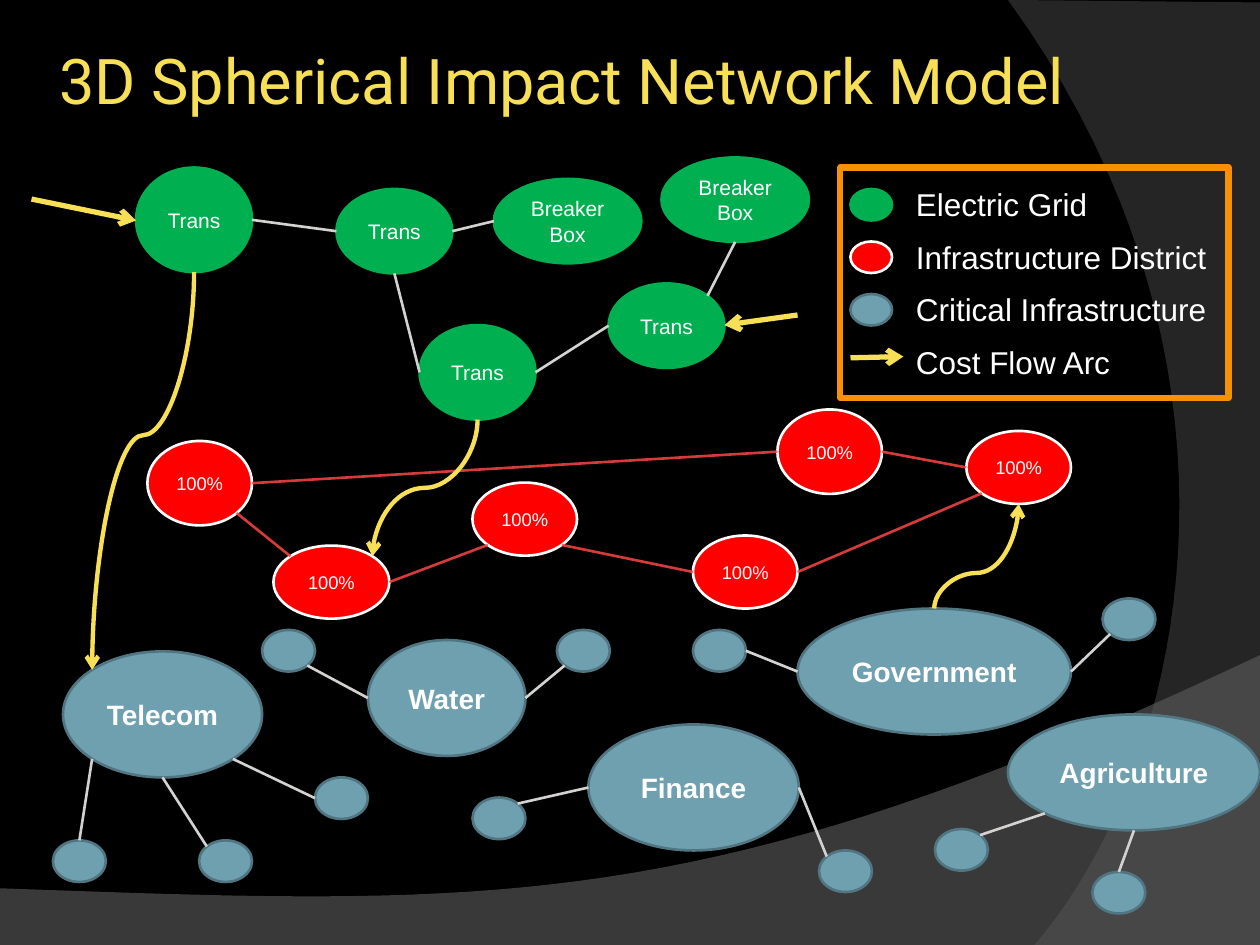
"""Build the 3D Spherical Impact Network Model slide."""
from dataclasses import dataclass
from math import cos, pi, sin

from lxml.etree import SubElement
from pptx import Presentation
from pptx.dml.color import RGBColor
from pptx.enum.shapes import MSO_CONNECTOR as Link, MSO_SHAPE as Preset
from pptx.enum.text import MSO_ANCHOR as Anchor, PP_ALIGN as Align
from pptx.oxml.ns import qn
from pptx.util import Inches, Pt


@dataclass(frozen=True)
class Theme:
    """Colours, fonts and type sizes of the slide."""
    background: str = "000000"
    white: str = "FFFFFF"
    gold: str = "F7DF56"
    orange: str = "F89006"
    grey: str = "D4D2D0"
    rose: str = "FF4747"
    low_wave: str = "7F7F7F"
    side_wave: str = "5E5E5E"
    title_font: str = "Roboto"
    font: str = "Arial"
    title_size: float = 36
    legend_size: float = 18


THEME = Theme()

# fill, outline, type size, bold
KINDS = {
    "grid": ("00B050", "00B050", 12, False),
    "district": ("FF0000", "FFFFFF", 10.5, False),
    "critical": ("6EA0B0", "517682", 16, True),
}

SITES = ["top", "top left", "left", "bottom left",
         "bottom", "bottom right", "right", "top right"]

NODES = {
    "source": ("grid", "Trans", 1.08, 1.33, 0.92, 0.83),
    "relay": ("grid", "Trans", 2.67, 1.5, 0.92, 0.67),
    "junction": ("grid", "Trans", 3.33, 2.58, 0.92, 0.75),
    "feeder": ("grid", "Trans", 4.83, 2.25, 0.92, 0.67),
    "breaker 1": ("grid", "Breaker Box", 3.92, 1.42, 1.17, 0.67),
    "breaker 2": ("grid", "Breaker Box", 5.25, 1.25, 1.17, 0.67),
    "district 1": ("district", "100%", 1.17, 3.5, 0.83, 0.67),
    "district 2": ("district", "100%", 2.17, 4.33, 0.92, 0.58),
    "district 3": ("district", "100%", 3.75, 3.83, 0.83, 0.58),
    "district 4": ("district", "100%", 5.5, 4.25, 0.83, 0.58),
    "district 5": ("district", "100%", 6.17, 3.25, 0.83, 0.67),
    "district 6": ("district", "100%", 7.67, 3.42, 0.83, 0.58),
    "telecom": ("critical", "Telecom", 0.5, 5.17, 1.58, 1),
    "water": ("critical", "Water", 2.92, 5.08, 1.25, 0.92),
    "finance": ("critical", "Finance", 4.67, 5.75, 1.67, 1),
    "government": ("critical", "Government", 6.33, 4.83, 2.17, 1),
    "agriculture": ("critical", "Agriculture", 8, 5.67, 2, 0.92),
}

GRID_LINKS = [
    ("source", "right", "relay", "left"),
    ("relay", "right", "breaker 1", "left"),
    ("relay", "bottom", "junction", "left"),
    ("junction", "right", "feeder", "left"),
    ("feeder", "top right", "breaker 2", "bottom"),
]
DISTRICT_LINKS = [
    ("district 1", "bottom right", "district 2", "top left"),
    ("district 2", "right", "district 3", "bottom left"),
    ("district 3", "bottom right", "district 4", "left"),
    ("district 4", "right", "district 6", "bottom left"),
    ("district 1", "right", "district 5", "left"),
    ("district 5", "right", "district 6", "left"),
]
SATELLITES = [
    (0.42, 6.67, "top", "telecom", "bottom left"),
    (1.58, 6.67, "top left", "telecom", "bottom"),
    (2.5, 6.17, "left", "telecom", "bottom right"),
    (2.08, 5, "bottom right", "water", "left"),
    (4.42, 5, "bottom left", "water", "right"),
    (3.75, 6.33, "top right", "finance", "left"),
    (6.5, 6.75, "top left", "finance", "right"),
    (5.5, 5, "right", "government", "left"),
    (8.75, 4.75, "bottom left", "government", "right"),
    (7.42, 6.58, "top right", "agriculture", "bottom left"),
    (8.67, 6.92, "top", "agriculture", "bottom"),
]
COST_ARCS = [
    ("source", "bottom", "telecom", "top left", 0.41),
    ("junction", "bottom", "district 2", "top right", 0.5),
    ("government", "top", "district 6", "bottom", 0.34),
]
LEGEND = [("Electric Grid", "grid"), ("Infrastructure District", "district"),
          ("Critical Infrastructure", "critical"), ("Cost Flow Arc", None)]


def write(frame, text, *, size, color=THEME.white, font=THEME.font,
          bold=False, align=Align.LEFT, anchor=Anchor.TOP, inset=0.05):
    """Put one formatted paragraph into a text frame."""
    frame.word_wrap, frame.vertical_anchor = True, anchor
    frame.margin_left = frame.margin_right = Inches(inset)
    frame.margin_top = frame.margin_bottom = Inches(0.05)
    paragraph = frame.paragraphs[0]
    paragraph.alignment = align
    run = paragraph.add_run()
    run.text = text
    run.font.size, run.font.name, run.font.bold = Pt(size), font, bold
    run.font.color.rgb = RGBColor.from_string(color)


def set_alpha(part, percent):
    """Give the solid colour inside an XML part an opacity."""
    color = next(part.iter(qn("a:srgbClr")))
    SubElement(color, qn("a:alpha")).set("val", str(percent * 1000))


def add_oval(slide, kind, box, label=""):
    """Add an ellipse in the style of its network kind."""
    fill, outline, size, bold = KINDS[kind]
    oval = slide.shapes.add_shape(Preset.OVAL, *map(Inches, box))
    oval.shadow.inherit = False
    oval.fill.solid()
    oval.fill.fore_color.rgb = RGBColor.from_string(fill)
    oval.line.color.rgb = RGBColor.from_string(outline)
    oval.line.width = Pt(1.5)
    if label:
        write(oval.text_frame, label, size=size, bold=bold,
              align=Align.CENTER, anchor=Anchor.MIDDLE)
    return oval


def site_point(oval, site):
    """Return the point of a named connection site on an ellipse, in inches."""
    angle = pi / 2 + SITES.index(site) * pi / 4
    x = oval.left + oval.width / 2 * (1 + cos(angle))
    y = oval.top + oval.height / 2 * (1 - sin(angle))
    return x / Inches(1), y / Inches(1)


def add_line(slide, start, end, color, width=1.5, *, link=Link.STRAIGHT,
             arrow=False, opacity=None):
    """Add a connector between two points."""
    line = slide.shapes.add_connector(link, *map(Inches, (*start, *end)))
    line.line.color.rgb = RGBColor.from_string(color)
    line.line.width = Pt(width)
    properties = line._element.spPr
    if opacity:
        set_alpha(properties, opacity)
    if arrow:
        SubElement(properties.find(qn("a:ln")), qn("a:tailEnd")).set("type", "arrow")
    SubElement(properties, qn("a:effectLst"))
    return line


def join(slide, start, start_site, end, end_site, color, opacity=None):
    """Join two ellipses with a line glued to their connection sites."""
    line = add_line(slide, site_point(start, start_site),
                    site_point(end, end_site), color, opacity=opacity)
    glue = next(line._element.iter(qn("p:cNvCxnSpPr")))
    for tag, oval, site in (("a:stCxn", start, start_site), ("a:endCxn", end, end_site)):
        anchor = SubElement(glue, qn(tag))
        anchor.set("id", str(oval.shape_id))
        anchor.set("idx", str(SITES.index(site)))


def add_cost_arc(slide, start, end, bend):
    """Add a vertical S-curve as a connector turned by a quarter."""
    middle_x, middle_y = (start[0] + end[0]) / 2, (start[1] + end[1]) / 2
    half_x, half_y = (end[1] - start[1]) / 2, (start[0] - end[0]) / 2
    arc = add_line(slide, (middle_x - half_x, middle_y - half_y),
                   (middle_x + half_x, middle_y + half_y),
                   THEME.gold, 2.5, link=Link.CURVE, arrow=True)
    properties = arc._element.spPr
    properties.find(qn("a:xfrm")).set("rot", str(90 * 60000))
    guide = SubElement(next(properties.iter(qn("a:avLst"))), qn("a:gd"))
    guide.set("name", "adj1")
    guide.set("fmla", f"val {round(bend * 100000)}")


def add_wave(slide, corners, curve, color, opacity):
    """Add a translucent backdrop whose last edge is a Bezier curve."""
    steps = [step / 40 for step in range(41)]
    edge = [tuple(a * (1 - t) ** 3 + 3 * b * t * (1 - t) ** 2
                  + 3 * c * t * t * (1 - t) + d * t ** 3 for a, b, c, d in zip(*curve))
            for t in steps]
    first, *others = [tuple(map(Inches, point)) for point in corners + edge]
    builder = slide.shapes.build_freeform(*first)
    builder.add_line_segments(others)
    wave = builder.convert_to_shape()
    wave.shadow.inherit = False
    wave.fill.solid()
    wave.fill.fore_color.rgb = RGBColor.from_string(color)
    set_alpha(wave._element.spPr, opacity)
    wave.line.fill.background()


def add_legend(slide):
    """Add the framed key of node kinds and the cost arrow."""
    frame = slide.shapes.add_shape(Preset.RECTANGLE, *map(Inches, (6.67, 1.33, 3.08, 1.83)))
    frame.shadow.inherit = False
    frame.fill.background()
    frame.line.color.rgb = RGBColor.from_string(THEME.orange)
    frame.line.width = Pt(3.5)
    for row, (label, kind) in enumerate(LEGEND):
        top = 1.42 + row * 1.25 / 3
        if kind:
            add_oval(slide, kind, (6.75, top + 0.08, 0.33, 0.25))
        else:
            add_line(slide, (6.75, 2.84), (7.17, 2.83), THEME.gold, 3, arrow=True)
        entry = slide.shapes.add_textbox(*map(Inches, (7.17, top, 2.58, 0.4)))
        write(entry.text_frame, label, size=THEME.legend_size, inset=0.1)


def main():
    """Build and save the slide."""
    deck = Presentation()
    deck.slide_width, deck.slide_height = Inches(10), Inches(7.5)
    slide = deck.slides.add_slide(deck.slide_layouts[5])
    slide.background.fill.solid()
    slide.background.fill.fore_color.rgb = RGBColor.from_string(THEME.background)

    add_wave(slide, [(0, 7.5), (10, 7.5)],
             [(10, 5.2), (5.59, 7.29), (3.91, 7.19), (0, 7.05)], THEME.low_wave, 45)
    add_wave(slide, [(10, 0.02), (10, 7.5)],
             [(8.21, 7.5), (9.35, 6.19), (10.18, 3), (8, 0)], THEME.side_wave, 40)
    title = slide.shapes.title
    slide.shapes._spTree.append(title._element)
    title.left, title.top, title.width, title.height = map(Inches, (0.42, 0.17, 8.17, 0.92))
    write(title.text_frame, "3D Spherical Impact Network Model", size=THEME.title_size,
          color=THEME.gold, font=THEME.title_font, anchor=Anchor.MIDDLE)

    ovals = {name: add_oval(slide, kind, box, label)
             for name, (kind, label, *box) in NODES.items()}
    for links, color, opacity in ((GRID_LINKS, THEME.grey, None),
                                  (DISTRICT_LINKS, THEME.rose, 83)):
        for start, start_site, end, end_site in links:
            join(slide, ovals[start], start_site, ovals[end], end_site, color, opacity)
    for left, top, site, hub, hub_site in SATELLITES:
        satellite = add_oval(slide, "critical", (left, top, 0.42, 0.33))
        join(slide, satellite, site, ovals[hub], hub_site, THEME.grey)

    add_legend(slide)
    for start, start_site, end, end_site, bend in COST_ARCS:
        add_cost_arc(slide, site_point(ovals[start], start_site),
                     site_point(ovals[end], end_site), bend)
    for start, end in (((0.25, 1.58), (1.08, 1.75)), ((6.33, 2.5), (5.75, 2.58))):
        add_line(slide, start, end, THEME.gold, 3, arrow=True)
    deck.save("out.pptx")


if __name__ == "__main__":
    main()
